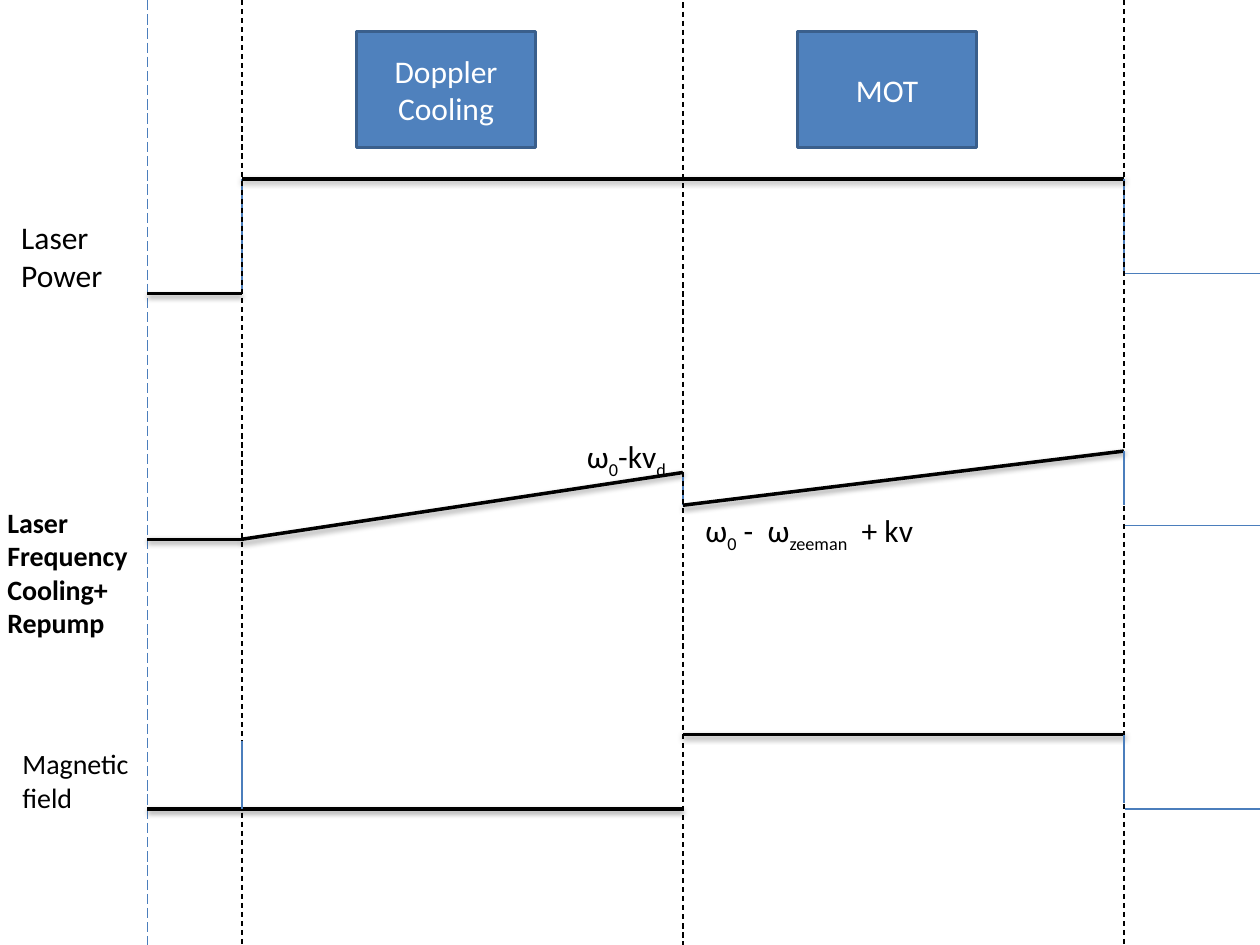
from dataclasses import dataclass

from lxml.etree import SubElement
from pptx import Presentation
from pptx.dml.color import RGBColor
from pptx.enum.dml import MSO_LINE
from pptx.enum.shapes import MSO_CONNECTOR, MSO_SHAPE
from pptx.enum.text import MSO_ANCHOR, MSO_AUTO_SIZE, PP_ALIGN
from pptx.oxml.ns import qn
from pptx.util import Pt

PX = 9144  # 100 px to the inch
WIDTH, HEIGHT = 1000, 750
BLACK, WHITE, BLUE = "000000", "FFFFFF", "4B7EBC"
BOX_FILL, BOX_LINE = "4F81BD", "3A5F8C"
FONT = "Calibri"

# Times at which the stages change
START, COOLING, TRAP, END = 117, 192, 542, 892


@dataclass(frozen=True)
class Style:
    color: str
    weight: float
    dash: MSO_LINE | None = None
    shadow: bool = False


@dataclass(frozen=True)
class Stroke:
    style: Style
    x1: int
    y1: int
    x2: int
    y2: int


@dataclass(frozen=True)
class Label:
    left: int
    top: int
    width: int
    height: int
    lines: tuple[str, ...]  # "_" switches subscript on and off
    size: int = 18
    bold: bool = False
    wrap: bool = False


@dataclass(frozen=True)
class Stage:
    left: int
    lines: tuple[str, ...]


SIGNAL = Style(BLACK, 2, shadow=True)
STEP = Style(BLUE, 0.75)
BORDER = Style(BLACK, 0.75, MSO_LINE.DASH)
ORIGIN = Style(BLUE, 0.75, MSO_LINE.LONG_DASH)

STROKES = (
    Stroke(ORIGIN, START, 0, START, HEIGHT),
    # Laser power
    Stroke(SIGNAL, START, 233, COOLING, 233),
    Stroke(STEP, COOLING, 233, COOLING, 142),
    Stroke(SIGNAL, COOLING, 142, END, 142),
    Stroke(STEP, END, 142, END, 217),
    Stroke(STEP, END, 217, WIDTH, 217),
    # Laser frequency and stage borders
    Stroke(SIGNAL, START, 428, COOLING, 428),
    Stroke(BORDER, COOLING, 0, COOLING, HEIGHT),
    Stroke(SIGNAL, COOLING, 428, TRAP, 375),
    Stroke(STEP, TRAP, 375, TRAP, 401),
    Stroke(SIGNAL, TRAP, 401, END, 358),
    Stroke(BORDER, END, 0, END, HEIGHT),
    Stroke(BORDER, TRAP, 2, TRAP, HEIGHT),
    Stroke(STEP, END, 358, END, 401),
    Stroke(STEP, END + 1, 417, WIDTH, 417),
    # Magnetic field
    Stroke(SIGNAL, START, 642, TRAP, 642),
    Stroke(STEP, COOLING, 642, COOLING, 588),
    Stroke(SIGNAL, TRAP, 583, END + 1, 583),
    Stroke(STEP, END, 637, END, 583),
    Stroke(STEP, END + 1, 642, WIDTH, 642),
)

LABELS = (
    Label(7, 168, 85, 71, ("Laser", "Power")),
    Label(-4, 396, 117, 118, ("Laser", "Frequency", "Cooling+", "Repump"), size=16, bold=True),
    Label(8, 588, 500, 64, ("Magnetic", "field"), size=16, wrap=True),
    Label(456, 342, 85, 40, ("ω_0_-kv_d",)),
    Label(550, 401, 195, 40, ("ω_0_ -  ω_zeeman_  + kv",)),
)

STAGES = (Stage(283, ("Doppler", "Cooling")), Stage(633, ("MOT",)))


def rgb(color: str) -> RGBColor:
    return RGBColor.from_string(color)


def px(*lengths: int) -> list[int]:
    return [length * PX for length in lengths]


def write(frame, lines, *, size=18, color=BLACK, bold=False, align=PP_ALIGN.LEFT) -> None:
    for index, line in enumerate(lines):
        para = frame.paragraphs[0] if index == 0 else frame.add_paragraph()
        para.alignment = align
        for part, text in enumerate(line.split("_")):
            span = para.add_run()
            span.text = text
            span.font.name = FONT
            span.font.size = Pt(size)
            span.font.bold = bold
            span.font.color.rgb = rgb(color)
            if part % 2:
                span._r.get_or_add_rPr().set("baseline", "-25000")


def draw_stroke(slide, stroke: Stroke) -> None:
    style = stroke.style
    line = slide.shapes.add_connector(
        MSO_CONNECTOR.STRAIGHT, *px(stroke.x1, stroke.y1, stroke.x2, stroke.y2))
    line.line.color.rgb = rgb(style.color)
    line.line.width = Pt(style.weight)
    if style.dash is not None:
        line.line.dash_style = style.dash
    effects = SubElement(line._element.spPr, qn("a:effectLst"))
    if style.shadow:
        shadow = SubElement(effects, qn("a:outerShdw"), blurRad="40000", dist="20000",
                            dir="5400000", rotWithShape="0")
        tint = SubElement(shadow, qn("a:srgbClr"), val=BLACK)
        SubElement(tint, qn("a:alpha"), val="38000")


def draw_label(slide, label: Label) -> None:
    box = slide.shapes.add_textbox(*px(label.left, label.top, label.width, label.height))
    frame = box.text_frame
    frame.word_wrap = label.wrap
    frame.auto_size = MSO_AUTO_SIZE.SHAPE_TO_FIT_TEXT
    write(frame, label.lines, size=label.size, bold=label.bold)


def draw_stage(slide, stage: Stage) -> None:
    box = slide.shapes.add_shape(MSO_SHAPE.RECTANGLE, *px(stage.left, 25, 142, 92))
    box.shadow.inherit = False
    box.fill.solid()
    box.fill.fore_color.rgb = rgb(BOX_FILL)
    box.line.color.rgb = rgb(BOX_LINE)
    box.line.width = Pt(2)
    box.text_frame.word_wrap = True
    box.text_frame.vertical_anchor = MSO_ANCHOR.MIDDLE
    write(box.text_frame, stage.lines, color=WHITE, align=PP_ALIGN.CENTER)


def main() -> None:
    deck = Presentation()
    deck.slide_width, deck.slide_height = px(WIDTH, HEIGHT)
    slide = deck.slides.add_slide(deck.slide_layouts[6])
    for stroke in STROKES:
        draw_stroke(slide, stroke)
    for stage in STAGES:
        draw_stage(slide, stage)
    for label in LABELS:
        draw_label(slide, label)
    deck.save("out.pptx")


if __name__ == "__main__":
    main()
